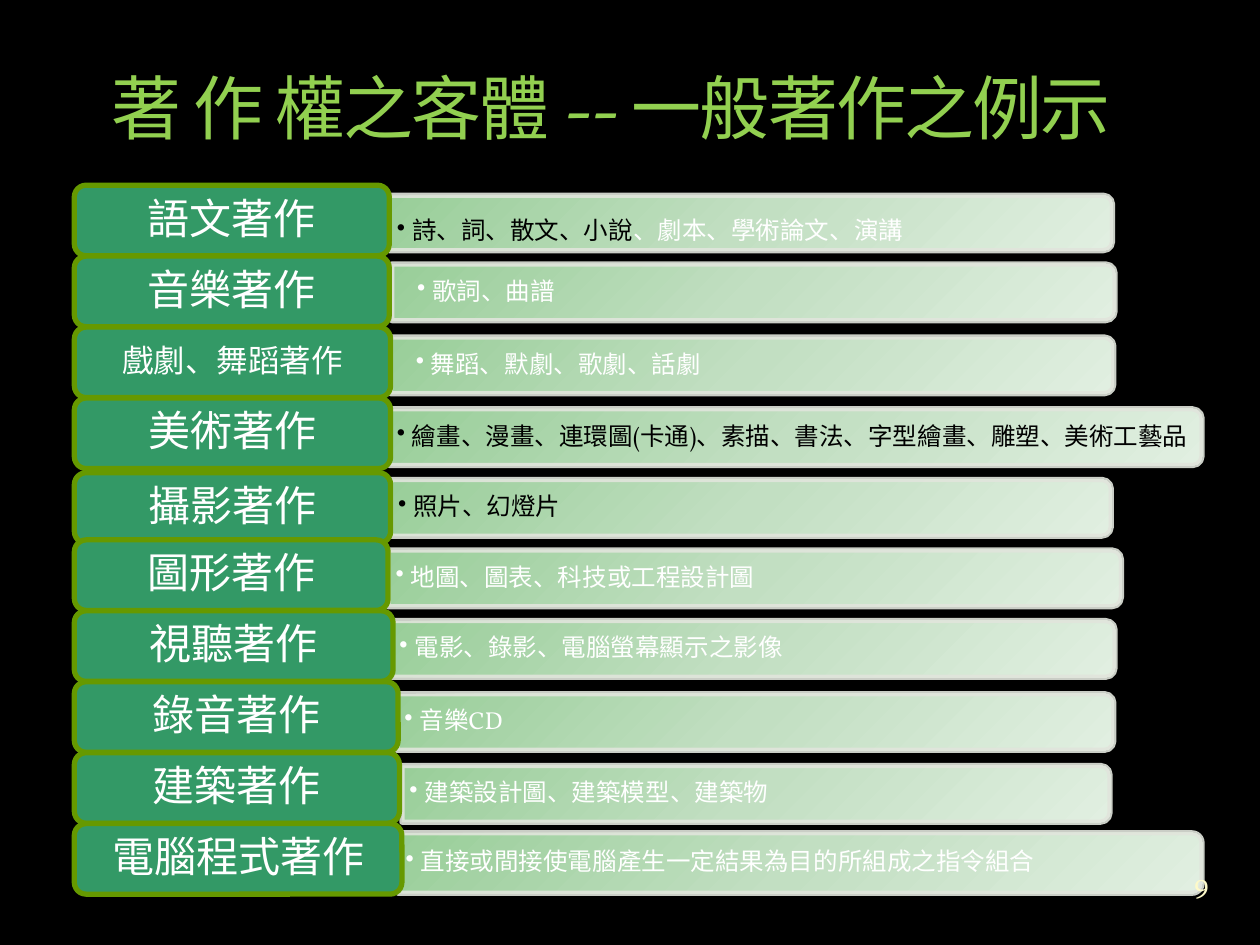
from copy import deepcopy
from dataclasses import dataclass

from lxml.etree import SubElement
from pptx import Presentation
from pptx.dml.color import RGBColor
from pptx.enum.shapes import MSO_SHAPE as Preset
from pptx.enum.text import MSO_ANCHOR as Anchor, PP_ALIGN as Align
from pptx.oxml.ns import qn
from pptx.util import Inches, Pt

FONT = "Vollkorn"
COLORS = {
    "background": "000000", "title": "92D050", "title_edge": "3C4422",
    "label": "339966", "label_edge": "669900", "bar_edge": "E1E5DC",
    "dark": "000000", "light": "FFFFFF", "number": "FEFAC9",
}
BAR_STOPS = [(0, "99CE99"), (0.5, "C2DFC2"), (1, "E1EFE1")]
LABEL_LEFT, LABEL_HEIGHT, LABEL_PAD = 0.59, 0.56, 0.03
FIRST_TOP, ROW_PITCH = 1.47, 0.563
TIGHT, WIDE = (0.06, 0.03, 0.06, 0.03), (0.2, 0.1, 0.2, 0.1)
LOWERED = (0.06, 0.17, 0.06, 0.03)


@dataclass
class Work:
    label: str
    examples: list[tuple[str, str]]  # (text, colour name)
    label_width: float
    bar_left: float
    bar_middle: float
    bar_width: float
    bar_height: float = 0.45
    margins: tuple = TIGHT
    label_size: int = 24
    label_margins: tuple = (0.1, 0.05, 0.1, 0.05)
    label_shift: float = 0


WORKS = [
    Work("語文著作", [("詩、詞、散文、小說", "dark"), ("、劇本、學術論文、演講", "light")],
         2.5, 3.09, 1.77, 5.74, 0.44, margins=LOWERED),
    Work("音樂著作", [("歌詞、曲譜", "light")], 2.5, 3.11, 2.32, 5.74, margins=WIDE),
    Work("戲劇、舞蹈著作", [("舞蹈、默劇、歌劇、話劇", "light")], 2.51, 3.1, 2.9, 5.74,
         margins=WIDE, label_size=18, label_margins=(0.07, 0.04, 0.07, 0.04)),
    Work("美術著作", [("繪畫、漫畫、連環圖(卡通)、素描、書法、字型繪畫、雕塑、美術工藝品", "dark")],
         2.51, 3.09, 3.47, 6.45),
    Work("攝影著作", [("照片、幻燈片", "dark")], 2.51, 3.1, 4.03, 5.72, label_shift=0.03),
    Work("圖形著作", [("地圖、圖表、科技或工程設計圖", "light")], 2.49, 3.08, 4.59, 5.82),
    Work("視聽著作", [("電影、錄影、電腦螢幕顯示之影像", "light")], 2.53, 3.11, 5.15, 5.74),
    Work("錄音著作", [("音樂CD", "light")], 2.57, 3.15, 5.73, 5.69),
    Work("建築著作", [("建築設計圖、建築模型、建築物", "light")], 2.58, 3.19, 6.3, 5.62),
    Work("電腦程式著作", [("直接或間接使電腦產生一定結果為目的所組成之指令組合", "light")],
         2.6, 3.16, 6.85, 6.38, 0.48),
]


def rgb(name: str) -> RGBColor:
    return RGBColor.from_string(COLORS[name])


def add_text(slide, box: tuple, runs: list[tuple[str, str]], size: int,
             margins: tuple = (0.1, 0.05, 0.1, 0.05), align=Align.CENTER,
             anchor=Anchor.MIDDLE):
    """Place a one-paragraph text box and return its paragraph."""
    frame = slide.shapes.add_textbox(*map(Inches, box)).text_frame
    frame.word_wrap = True
    frame.vertical_anchor = anchor
    (frame.margin_left, frame.margin_top,
     frame.margin_right, frame.margin_bottom) = map(Inches, margins)
    paragraph = frame.paragraphs[0]
    paragraph.alignment = align
    for text, color in runs:
        run = paragraph.add_run()
        run.text = text
        run.font.name = FONT
        run.font.size = Pt(size)
        run.font.color.rgb = rgb(color)
    return paragraph


def set_alpha(color_parent, percent: int) -> None:
    color = next(color_parent.iter(qn("a:srgbClr")))
    SubElement(color, qn("a:alpha"), val=str(percent * 1000))


def add_bar(slide, work: Work) -> None:
    """Draw the gradient bar, turned so its round corners face right."""
    center = work.bar_left + work.bar_width / 2
    bar = slide.shapes.add_shape(
        Preset.ROUND_2_SAME_RECTANGLE,
        Inches(center - work.bar_height / 2),
        Inches(work.bar_middle - work.bar_width / 2),
        Inches(work.bar_height), Inches(work.bar_width))
    bar.rotation = 90
    bar.shadow.inherit = False
    bar.fill.gradient()
    bar.fill.gradient_angle = 315
    gradient = bar.fill._xPr.find(qn("a:gradFill"))
    gradient.set("rotWithShape", "0")
    stop_list = gradient.find(qn("a:gsLst"))
    stop_list.append(deepcopy(stop_list[0]))
    for stop, (position, color) in zip(bar.fill.gradient_stops, BAR_STOPS):
        stop.position = position
        stop.color.rgb = RGBColor.from_string(color)
    bar.line.color.rgb = rgb("bar_edge")
    bar.line.width = Pt(3)
    set_alpha(bar.line._get_or_add_ln(), 90)


def add_examples(slide, work: Work) -> None:
    height = work.bar_height - 0.04
    box = (work.bar_left, work.bar_middle - height / 2, work.bar_width - 0.02, height)
    paragraph = add_text(slide, box, work.examples, 14, work.margins, Align.LEFT)
    paragraph.level = 1
    paragraph.line_spacing = 0.9
    paragraph.space_after = Pt(2)
    properties = paragraph._p.get_or_add_pPr()
    properties.set("marL", str(Inches(0.12)))
    properties.set("indent", str(Inches(-0.12)))
    SubElement(properties, qn("a:buChar"), char="•")


def add_label(slide, work: Work, top: float) -> None:
    label = slide.shapes.add_shape(
        Preset.ROUNDED_RECTANGLE, Inches(LABEL_LEFT), Inches(top),
        Inches(work.label_width), Inches(LABEL_HEIGHT))
    label.shadow.inherit = False
    label.fill.solid()
    label.fill.fore_color.rgb = rgb("label")
    label.line.color.rgb = rgb("label_edge")
    label.line.width = Pt(3)
    box = (LABEL_LEFT + LABEL_PAD, top + LABEL_PAD,
           work.label_width - 2 * LABEL_PAD, LABEL_HEIGHT - 2 * LABEL_PAD)
    paragraph = add_text(slide, box, [(work.label, "light")], work.label_size,
                         work.label_margins)
    paragraph.line_spacing = 0.9
    paragraph.space_after = Pt(work.label_size * 0.35)


def add_title(slide) -> None:
    title = add_text(slide, (0.28, 0.36, 9.14, 0.87),
                     [("著 作 權之客體 -- 一般著作之例示", "title")], 40,
                     anchor=Anchor.BOTTOM)
    properties = title.runs[0].font._element
    properties.set("spc", "-100")
    # Thin translucent outline around the letters
    outline = SubElement(properties, qn("a:ln"), w=str(Pt(0.25)))
    fill = SubElement(outline, qn("a:solidFill"))
    SubElement(fill, qn("a:srgbClr"), val=COLORS["title_edge"])
    set_alpha(outline, 25)
    properties.insert(0, outline)


def main() -> None:
    deck = Presentation()
    deck.slide_width, deck.slide_height = Inches(10), Inches(7.5)
    slide = deck.slides.add_slide(deck.slide_layouts[6])
    slide.background.fill.solid()
    slide.background.fill.fore_color.rgb = rgb("background")

    add_title(slide)

    # One row per kind of work
    for row, work in enumerate(WORKS):
        add_bar(slide, work)
        add_examples(slide, work)
        add_label(slide, work, FIRST_TOP + row * ROW_PITCH + work.label_shift)

    # Slide number
    add_text(slide, (9.2, 6.76, 0.67, 0.5), [("9", "number")], 16, (0, 0, 0, 0))

    deck.save("out.pptx")


if __name__ == "__main__":
    main()
